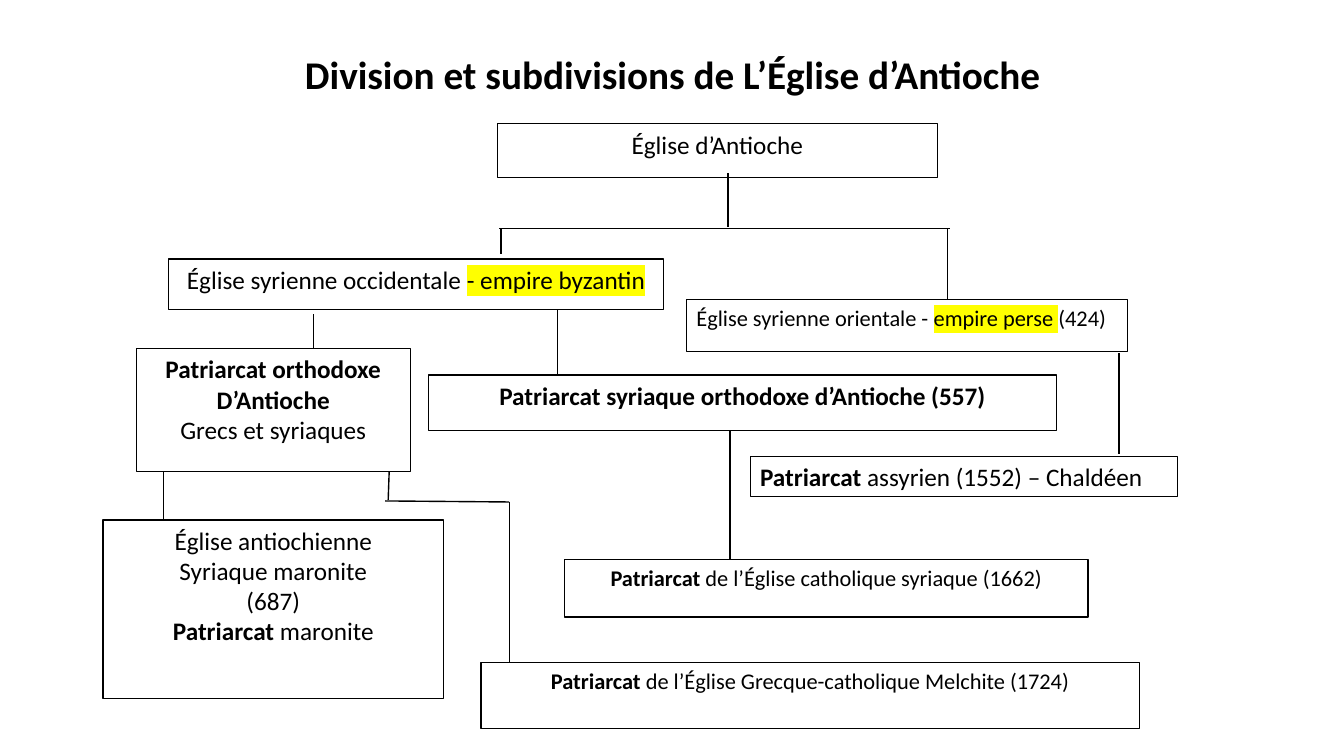
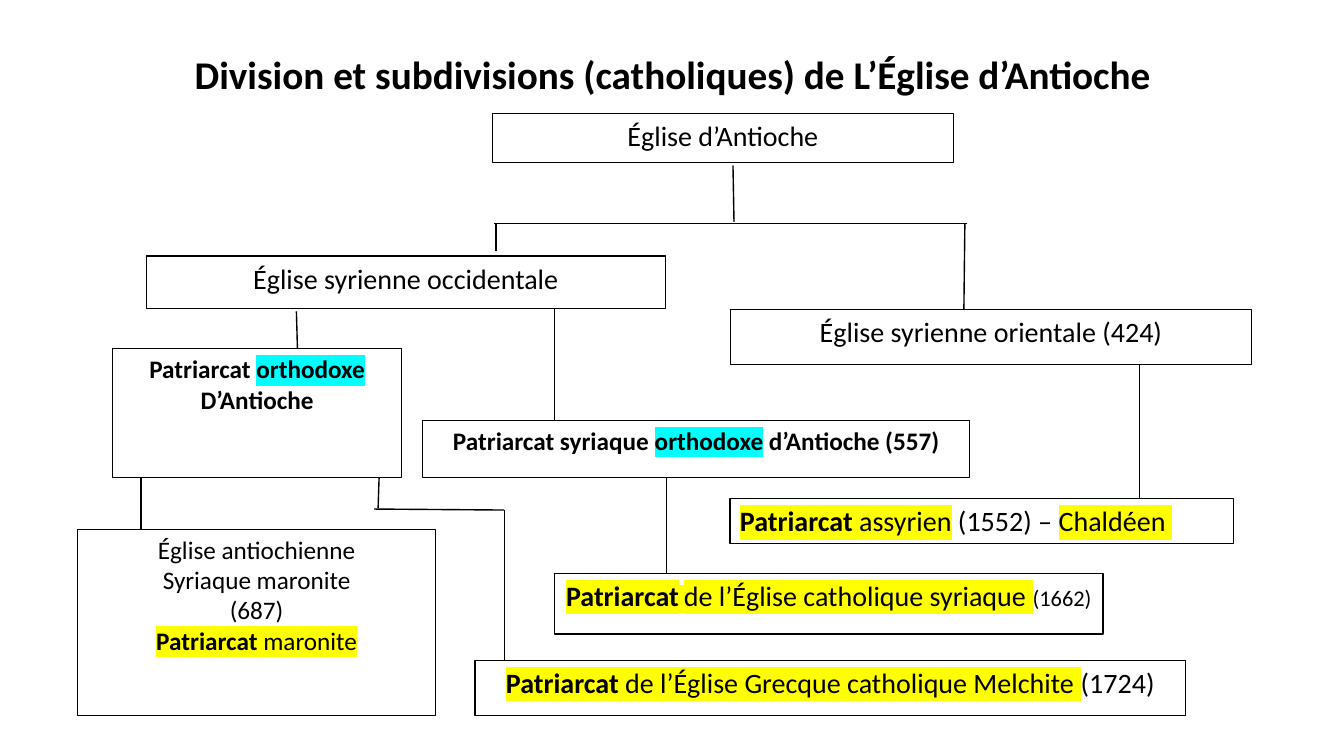
from dataclasses import dataclass
from itertools import pairwise

from lxml.etree import SubElement
from pptx import Presentation
from pptx.dml.color import RGBColor
from pptx.enum.shapes import MSO_CONNECTOR, MSO_SHAPE
from pptx.enum.text import MSO_ANCHOR, MSO_AUTO_SIZE, PP_ALIGN
from pptx.oxml import parse_xml
from pptx.oxml.ns import nsdecls, qn
from pptx.util import Inches, Pt

INK = "000000"
PAPER = "FFFFFF"
YELLOW = "FFFF00"
CYAN = "00FFFF"


def color(hex_value):
    return RGBColor.from_string(hex_value)


@dataclass
class Span:
    """A piece of a line; a size of None takes the size of its box."""
    text: str
    bold: bool = False
    mark: str | None = None
    size: float | None = None


def write(frame, lines, *, size, align=PP_ALIGN.CENTER, spacing=1.0):
    """Fill a text frame; each line is a string, a Span or a list of Spans."""
    for index, line in enumerate(lines):
        paragraph = frame.paragraphs[0] if index == 0 else frame.add_paragraph()
        paragraph.alignment = align
        paragraph.line_spacing = spacing
        for span in line if isinstance(line, list) else [line]:
            if isinstance(span, str):
                span = Span(span)
            run = paragraph.add_run()
            run.text = span.text
            run.font.name = "Calibri"
            run.font.size = Pt(span.size or size)
            run.font.bold = span.bold
            run.font.color.rgb = color(INK)
            if span.mark:
                highlight = parse_xml(
                    f'<a:highlight {nsdecls("a")}><a:srgbClr val="{span.mark}"/></a:highlight>')
                run.font._element.find(qn("a:solidFill")).addnext(highlight)


class ChurchTree:
    def __init__(self):
        self.deck = Presentation()
        self.deck.slide_width = Inches(13.33)
        self.deck.slide_height = Inches(7.5)
        self.slide = None

    def new_slide(self, heading):
        self.slide = self.deck.slides.add_slide(self.deck.slide_layouts[5])
        title = self.slide.shapes.title
        title.left, title.top = Inches(0.92), Inches(0.4)
        title.width, title.height = Inches(11.5), Inches(0.73)
        title.text_frame.auto_size = MSO_AUTO_SIZE.NONE
        title.text_frame.vertical_anchor = MSO_ANCHOR.MIDDLE
        write(title.text_frame, [Span(heading, bold=True)], size=28, spacing=0.9)

    def church(self, left, top, width, height, *lines, size=18,
               align=PP_ALIGN.CENTER, border=0.75):
        box = self.slide.shapes.add_shape(
            MSO_SHAPE.RECTANGLE, Inches(left), Inches(top), Inches(width), Inches(height))
        box.shadow.inherit = False
        box.fill.solid()
        box.fill.fore_color.rgb = color(PAPER)
        box.line.color.rgb = color(INK)
        box.line.width = Pt(border)
        box.text_frame.word_wrap = True
        box.text_frame.vertical_anchor = MSO_ANCHOR.TOP
        write(box.text_frame, lines, size=size, align=align)

    def branch(self, *points, width=1):
        """Join each point to the next with a straight line."""
        for start, end in pairwise(points):
            line = self.slide.shapes.add_connector(
                MSO_CONNECTOR.STRAIGHT, *map(Inches, start + end))
            line.line.color.rgb = color(INK)
            line.line.width = Pt(width)
            SubElement(line._element.spPr, qn("a:effectLst"))

    def save(self):
        self.deck.save("out.pptx")


def patriarchate(rest, mark=None):
    return [Span("Patriarcat", bold=True, mark=mark), Span(rest, mark=mark)]


def all_divisions(tree):
    tree.new_slide("Division et subdivisions de L’Église d’Antioche")

    tree.church(4.93, 1.23, 4.37, 0.53, "Église d’Antioche")
    tree.church(1.67, 2.57, 4.91, 0.5,
                [Span("Église syrienne occidentale "), Span("- empire byzantin", mark=YELLOW)],
                border=1)
    tree.church(6.81, 2.97, 4.37, 0.52,
                [Span("Église syrienne orientale - "), Span("empire perse ", mark=YELLOW),
                 Span("(424)")],
                size=16, align=PP_ALIGN.LEFT)
    tree.church(1.35, 3.46, 2.72, 1.22, Span("Patriarcat orthodoxe", bold=True),
                Span("D’Antioche", bold=True), "Grecs et syriaques")
    tree.church(4.25, 3.72, 6.23, 0.55,
                Span("Patriarcat syriaque orthodoxe d’Antioche (557)", bold=True))
    tree.church(7.44, 4.53, 4.24, 0.4, patriarchate(" assyrien (1552) – Chaldéen"),
                align=PP_ALIGN.LEFT)
    tree.church(1.02, 5.16, 3.38, 1.77, "Église antiochienne", "Syriaque maronite", "(687)",
                patriarchate(" maronite"), border=1)
    tree.church(5.6, 5.55, 5.19, 0.57,
                patriarchate(" de l’Église catholique syriaque (1662)"), size=16, border=1)
    tree.church(4.77, 6.57, 6.53, 0.66,
                patriarchate(" de l’Église Grecque-catholique Melchite (1724)"),
                size=16, border=1)

    tree.branch((7.22, 1.72), (7.22, 2.25))
    tree.branch((4.95, 2.27), (9.42, 2.27))
    tree.branch((4.97, 2.27), (4.97, 2.52))
    tree.branch((9.4, 2.27), (9.4, 2.97))
    tree.branch((3.11, 3.12), (3.11, 3.46))
    tree.branch((5.53, 3.07), (5.53, 3.72))
    tree.branch((7.24, 4.27), (7.24, 5.55))
    tree.branch((11.1, 3.5), (11.1, 4.5))
    tree.branch((1.62, 4.68), (1.62, 5.16))
    tree.branch((3.86, 4.68), (3.85, 4.96))
    tree.branch((3.82, 4.97), (5.05, 4.98))
    tree.branch((5.05, 4.98), (5.05, 6.57), width=0.75)


def catholic_divisions(tree):
    tree.new_slide("Division et subdivisions (catholiques) de L’Église d’Antioche")
    orthodox = Span("orthodoxe", bold=True, mark=CYAN)

    tree.church(4.88, 1.13, 4.58, 0.48, "Église d’Antioche", size=20)
    tree.church(1.45, 2.54, 5.15, 0.52, "Église syrienne occidentale", size=20, border=1)
    tree.church(7.25, 3.07, 5.16, 0.55, "Église syrienne orientale (424)", size=20)
    tree.church(1.12, 3.46, 2.86, 1.28, [Span("Patriarcat ", bold=True), orthodox],
                Span("D’Antioche", bold=True))
    tree.church(4.19, 4.17, 5.43, 0.57,
                [Span("Patriarcat syriaque ", bold=True), orthodox,
                 Span(" d’Antioche (557)", bold=True)])
    tree.church(7.24, 4.95, 4.99, 0.44,
                patriarchate(" assyrien", YELLOW)
                + [Span(" (1552) – "), Span("Chaldéen ", mark=YELLOW)],
                size=20, align=PP_ALIGN.LEFT)
    tree.church(0.77, 5.25, 3.55, 1.85, "Église antiochienne", "Syriaque maronite", "(687)",
                patriarchate(" maronite", YELLOW), border=1)
    tree.church(5.5, 5.69, 5.44, 0.6,
                [Span("Patriarcat", bold=True, mark=YELLOW), Span(" ", mark=YELLOW, size=16),
                 Span("de l’Église catholique syriaque ", mark=YELLOW),
                 Span("(1662)", size=16)],
                size=20, border=1)
    tree.church(4.71, 6.55, 7.05, 0.55,
                patriarchate(" de l’Église Grecque catholique Melchite ", YELLOW)
                + [Span("(1724)")],
                size=20, border=1)

    tree.branch((7.27, 1.64), (7.28, 2.2))
    tree.branch((4.9, 2.22), (9.59, 2.22))
    tree.branch((4.92, 2.22), (4.92, 2.49))
    tree.branch((9.57, 2.22), (9.56, 3.07))
    tree.branch((2.94, 3.09), (2.95, 3.46))
    tree.branch((5.5, 3.06), (5.5, 4.17))
    tree.branch((6.61, 4.74), (6.61, 5.69))
    tree.branch((11.3, 3.62), (11.3, 4.95))
    tree.branch((1.4, 4.74), (1.4, 5.25))
    tree.branch((3.76, 4.74), (3.75, 5.04))
    tree.branch((3.71, 5.05), (5, 5.06))
    tree.branch((5, 5.06), (5, 6.55), width=0.75)


def main():
    tree = ChurchTree()
    all_divisions(tree)
    catholic_divisions(tree)
    tree.save()


if __name__ == "__main__":
    main()
